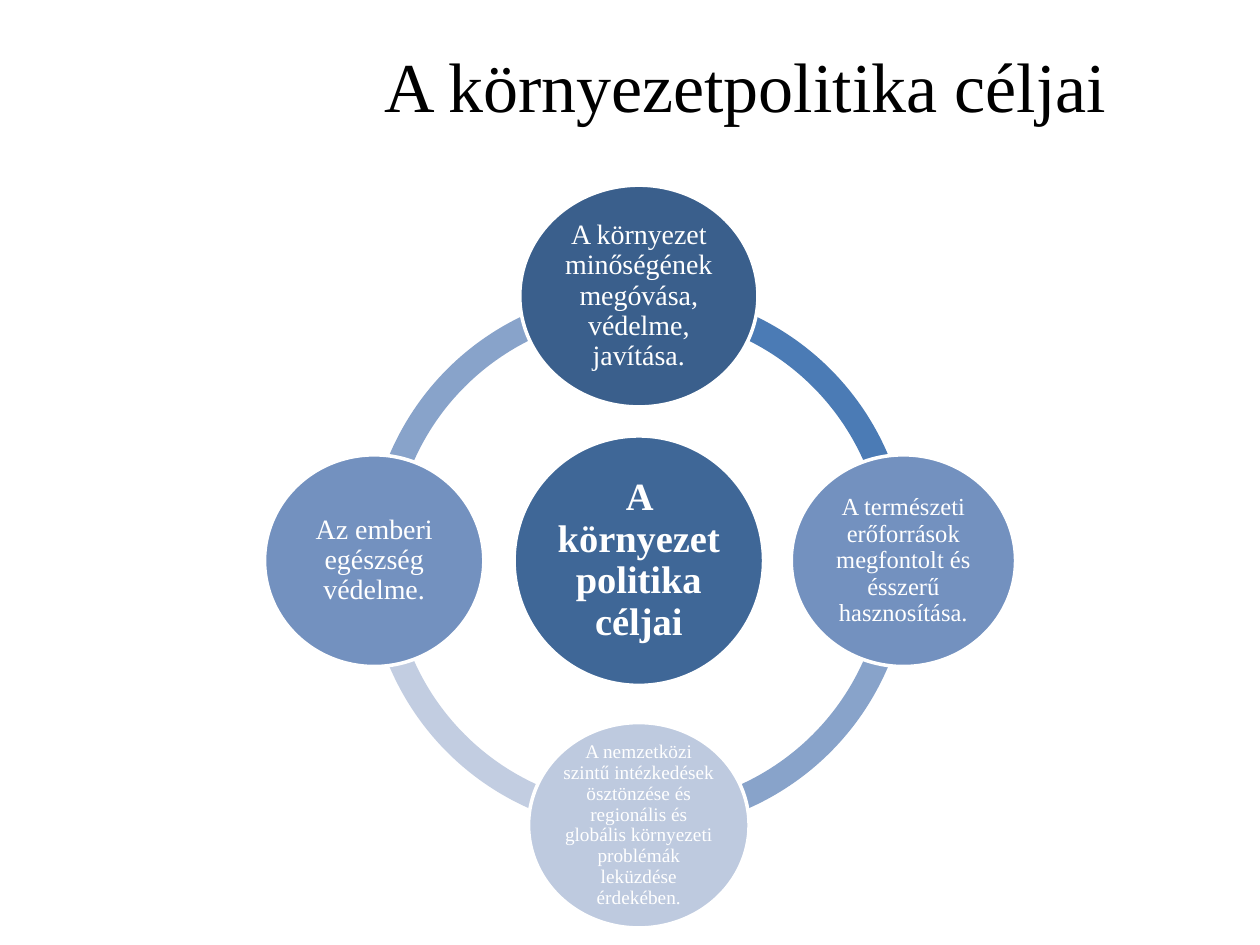
from math import cos, radians, sin

from pptx import Presentation
from pptx.dml.color import RGBColor
from pptx.enum.shapes import MSO_SHAPE
from pptx.enum.text import MSO_ANCHOR, MSO_AUTO_SIZE, PP_ALIGN
from pptx.util import Inches, Pt

FONT = "Times New Roman"
BLACK = RGBColor(0x00, 0x00, 0x00)
WHITE = RGBColor(0xFF, 0xFF, 0xFF)
CENTRE_BLUE = RGBColor(0x3F, 0x67, 0x97)
DARK_BLUE = RGBColor(0x3A, 0x5F, 0x8C)
MID_BLUE = RGBColor(0x73, 0x91, 0xBF)
PALE_BLUE = RGBColor(0xBE, 0xCA, 0xDF)
ARC_STRONG = RGBColor(0x4B, 0x7B, 0xB5)
ARC_MID = RGBColor(0x88, 0xA3, 0xCA)
ARC_PALE = RGBColor(0xC2, 0xCD, 0xE1)

TITLE = "A környezetpolitika céljai"
CENTRE_X, CENTRE_Y = 5.07, 4.45
ORBIT_RADIUS = 2.1
RING_SIZE = 4.3
RING_THICKNESS = 0.046

# Start angle in degrees, clockwise from the right; each arc is a quarter turn.
ARCS = [(180, ARC_MID), (90, ARC_PALE), (0, ARC_MID), (270, ARC_STRONG)]

# Angle on the orbit, width, height, fill, text size, text
GOALS = [
    (270, 1.89, 1.76, DARK_BLUE, 16,
     "A környezet minőségének megóvása, védelme, javítása."),
    (0, 1.78, 1.68, MID_BLUE, 14,
     "A természeti erőforrások megfontolt és ésszerű hasznosítása."),
    (90, 1.75, 1.63, PALE_BLUE, 11,
     "A nemzetközi szintű intézkedések ösztönzése és regionális és "
     "globális környezeti problémák leküzdése érdekében."),
    (180, 1.74, 1.68, MID_BLUE, 16, "Az emberi egészség védelme."),
]


def format_text(frame, size, colour, bold=False):
    for paragraph in frame.paragraphs:
        for span in paragraph.runs:
            span.font.name = FONT
            span.font.size = Pt(size)
            span.font.bold = bold
            span.font.color.rgb = colour


def add_title(page):
    title = page.shapes.title
    title.left, title.top = Inches(2.95), Inches(0.29)
    title.width, title.height = Inches(6), Inches(0.77)
    frame = title.text_frame
    frame.text = TITLE
    frame.word_wrap = False
    frame.auto_size = MSO_AUTO_SIZE.SHAPE_TO_FIT_TEXT
    frame.vertical_anchor = MSO_ANCHOR.TOP
    frame.paragraphs[0].alignment = PP_ALIGN.LEFT
    format_text(frame, 40, BLACK)


def add_centred_shape(page, kind, x, y, width, height, fill):
    """Add a filled shape whose middle lies at x, y."""
    shape = page.shapes.add_shape(
        kind, Inches(x - width / 2), Inches(y - height / 2),
        Inches(width), Inches(height))
    shape.shadow.inherit = False
    shape.fill.solid()
    shape.fill.fore_color.rgb = fill
    return shape


def add_arc(page, start, fill):
    arc = add_centred_shape(page, MSO_SHAPE.BLOCK_ARC, CENTRE_X, CENTRE_Y,
                            RING_SIZE, RING_SIZE, fill)
    arc.line.fill.background()
    # Angles are stored in 60000ths of a degree, adjustments in 100000ths.
    arc.adjustments[0] = start * 0.6
    arc.adjustments[1] = (start + 90) % 360 * 0.6
    arc.adjustments[2] = RING_THICKNESS


def add_circle(page, x, y, width, height, fill, text, size, inset=0.02, bold=False):
    circle = add_centred_shape(page, MSO_SHAPE.OVAL, x, y, width, height, fill)
    circle.line.color.rgb = WHITE
    circle.line.width = Pt(2)
    frame = circle.text_frame
    frame.text = text
    frame.word_wrap = True
    frame.vertical_anchor = MSO_ANCHOR.MIDDLE
    frame.margin_left = frame.margin_right = Inches(inset)
    frame.margin_top = frame.margin_bottom = Inches(inset)
    frame.paragraphs[0].alignment = PP_ALIGN.CENTER
    frame.paragraphs[0].line_spacing = 0.9
    format_text(frame, size, WHITE, bold)


def main():
    deck = Presentation()
    deck.slide_width, deck.slide_height = Inches(10), Inches(7.5)
    page = deck.slides.add_slide(deck.slide_layouts[5])
    add_title(page)
    for start, fill in ARCS:
        add_arc(page, start, fill)
    add_circle(page, CENTRE_X, CENTRE_Y, 1.98, 1.98, CENTRE_BLUE, TITLE, 22,
               inset=0.03, bold=True)
    for angle, width, height, fill, size, text in GOALS:
        x = CENTRE_X + ORBIT_RADIUS * cos(radians(angle))
        y = CENTRE_Y + ORBIT_RADIUS * sin(radians(angle))
        add_circle(page, x, y, width, height, fill, text, size)
    deck.save("out.pptx")


if __name__ == "__main__":
    main()
